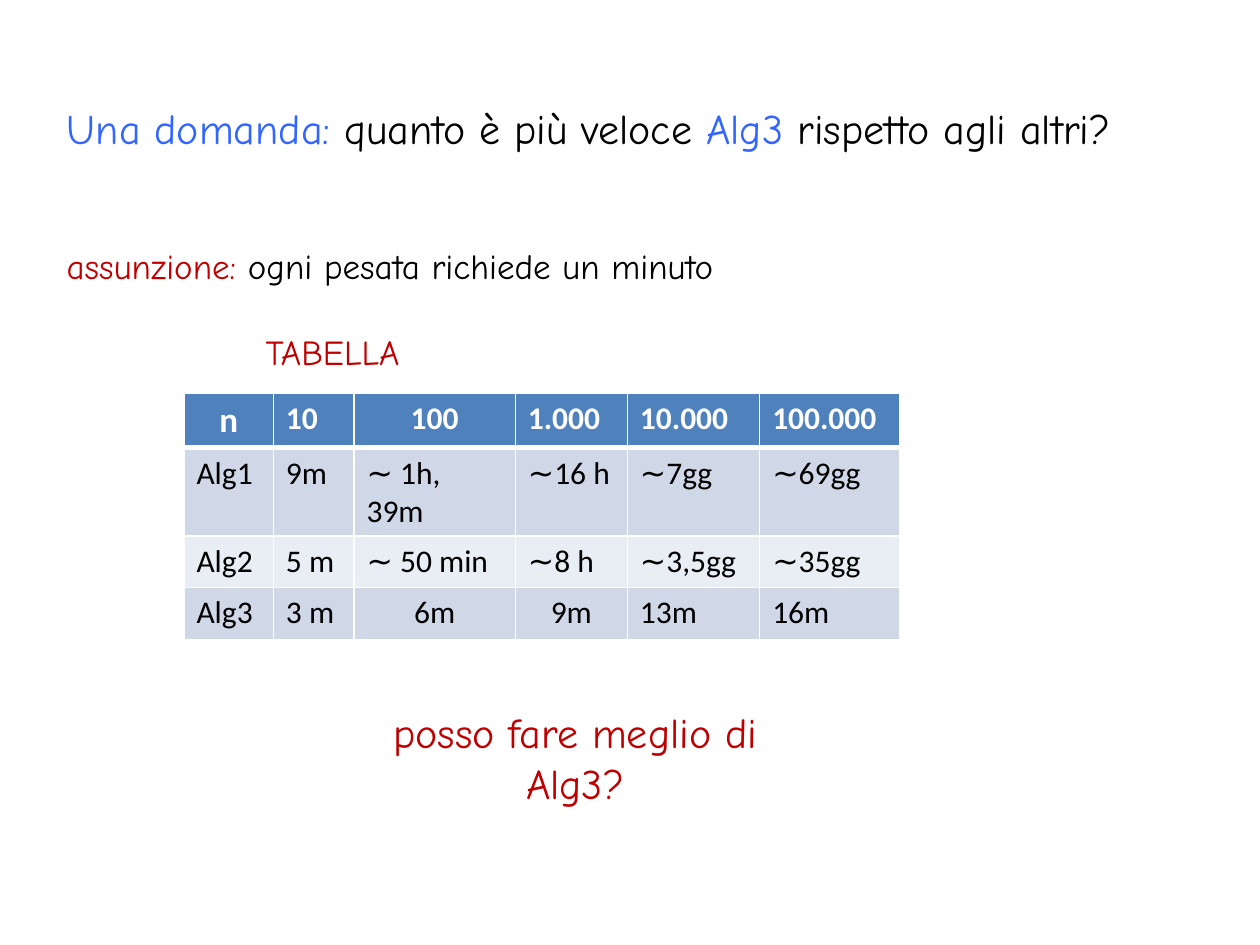
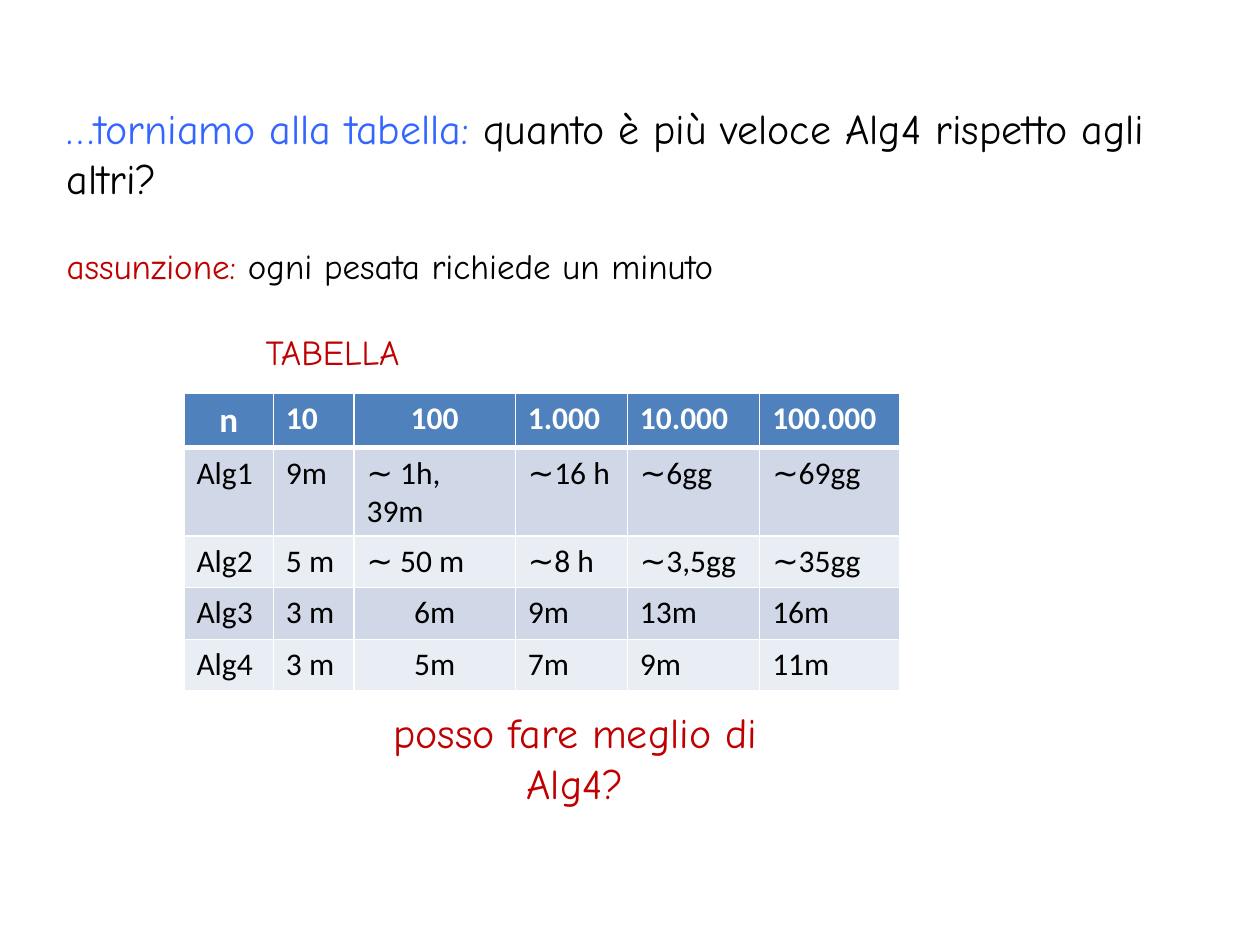
from dataclasses import dataclass
from typing import NamedTuple

from lxml import etree
from pptx import Presentation
from pptx import util as u
from pptx.dml.color import RGBColor
from pptx.enum import text
from pptx.oxml import ns

BLUE = RGBColor(0x33, 0x66, 0xFF)
RED = RGBColor(0xC0, 0x00, 0x00)
BLACK = RGBColor(0x00, 0x00, 0x00)
WHITE = RGBColor(0xFF, 0xFF, 0xFF)
HEADER = RGBColor(0x4F, 0x81, 0xBD)
BANDS = (RGBColor(0xE9, 0xED, 0xF4), RGBColor(0xD0, 0xD8, 0xE8))

TEXT_FONT = "Comic Neue"
TABLE_FONT = "Calibri"
SLIDE_W, SLIDE_H = u.Inches(10), u.Inches(7.5)
GRID_COLS, GRID_ROWS = 100, 75
COLUMN_WIDTHS = (7.1, 6.4, 12.8, 8.9, 10.5, 11.1)
ROW_HEIGHT = 4.1
HEADINGS = ("n", "10", "100", "1.000", "10.000", "100.000")


class Box(NamedTuple):
    col: float
    row: float
    cols: float
    rows: float


class Run(NamedTuple):
    words: str
    color: RGBColor


@dataclass(frozen=True)
class Label:
    box: Box
    runs: tuple[Run, ...]
    size: int
    align: text.PP_ALIGN = text.PP_ALIGN.LEFT


@dataclass(frozen=True)
class Comparison:
    title: Label
    times: tuple[tuple[str, ...], ...]
    centred: frozenset[tuple[int, int]]
    best: str


ASSUMPTION = Label(
    Box(4.3, 18.9, 59.8, 4.4),
    (Run("assunzione: ", RED), Run("ogni pesata richiede un minuto", BLACK)),
    20,
)
CAPTION = Label(Box(20.1, 25.7, 59.8, 4.4), (Run("TABELLA", RED),), 20)
TABLE_COL, TABLE_ROW = 14.6, 31.2

COMPARISONS = (
    Comparison(
        Label(
            Box(4.3, 7.6, 92.9, 5),
            (
                Run("Una domanda: ", BLUE),
                Run("quanto è più veloce ", BLACK),
                Run("Alg3 ", BLUE),
                Run("rispetto agli altri?", BLACK),
            ),
            24,
        ),
        (
            ("Alg1", "9m", "∼ 1h, 39m", "∼16 h", "∼7gg", "∼69gg"),
            ("Alg2", "5 m", "∼ 50 min", "∼8 h", "∼3,5gg", "∼35gg"),
            ("Alg3", "3 m", "6m", "9m", "13m", "16m"),
        ),
        frozenset({(0, 0), (0, 2), (3, 2), (3, 3)}),
        "Alg3",
    ),
    Comparison(
        Label(
            Box(4.3, 7.6, 92.9, 9.1),
            (
                Run("…torniamo alla tabella: ", BLUE),
                Run("quanto è più veloce Alg4 rispetto agli altri?", BLACK),
            ),
            24,
        ),
        (
            ("Alg1", "9m", "∼ 1h, 39m", "∼16 h", "∼6gg", "∼69gg"),
            ("Alg2", "5 m", "∼ 50 m", "∼8 h", "∼3,5gg", "∼35gg"),
            ("Alg3", "3 m", "6m", "9m", "13m", "16m"),
            ("Alg4", "3 m", "5m", "7m", "9m", "11m"),
        ),
        frozenset({(0, 0), (0, 2), (3, 2), (4, 2)}),
        "Alg4",
    ),
)


def across(cols: float) -> int:
    return round(SLIDE_W * cols / GRID_COLS)


def down(rows: float) -> int:
    return round(SLIDE_H * rows / GRID_ROWS)


def place(box: Box) -> tuple[int, int, int, int]:
    return across(box.col), down(box.row), across(box.cols), down(box.rows)


def add_run(p, run: Run, size: int, font: str, bold: bool = False) -> None:
    r = p.add_run()
    r.text = run.words
    r.font.name = font
    r.font.size = u.Pt(size)
    r.font.bold = bold
    r.font.color.rgb = run.color


def write_label(sp, label: Label) -> None:
    tf = sp.text_frame
    tf.word_wrap = True
    tf.auto_size = text.MSO_AUTO_SIZE.SHAPE_TO_FIT_TEXT
    tf.vertical_anchor = text.MSO_ANCHOR.TOP
    p = tf.paragraphs[0]
    p.alignment = label.align
    for run in label.runs:
        add_run(p, run, label.size, TEXT_FONT)


def add_title(s, label: Label) -> None:
    sp = s.shapes.title
    sp.left, sp.top, sp.width, sp.height = place(label.box)
    write_label(sp, label)


def add_label(s, label: Label) -> None:
    write_label(s.shapes.add_textbox(*place(label.box)), label)


def set_borders(cell, top: int, bottom: int) -> None:
    tc_pr = cell._tc.get_or_add_tcPr()
    edges = (("L", 1), ("R", 1), ("T", top), ("B", bottom))
    for i, (side, width) in enumerate(edges):
        ln = etree.Element(ns.qn(f"a:ln{side}"), w=str(u.Pt(width)))
        fill = etree.SubElement(ln, ns.qn("a:solidFill"))
        etree.SubElement(fill, ns.qn("a:srgbClr"), val=str(WHITE))
        tc_pr.insert(i, ln)


def add_times_table(s, comparison: Comparison) -> None:
    rows = (HEADINGS, *comparison.times)
    box = Box(TABLE_COL, TABLE_ROW, sum(COLUMN_WIDTHS), ROW_HEIGHT * len(rows))
    table = s.shapes.add_table(len(rows), len(HEADINGS), *place(box)).table
    table.first_row = table.horz_banding = False
    for column, width in zip(table.columns, COLUMN_WIDTHS):
        column.width = across(width)
    for i, row in enumerate(rows):
        table.rows[i].height = down(ROW_HEIGHT)
        is_header = i == 0
        for j, words in enumerate(row):
            cell = table.cell(i, j)
            cell.fill.solid()
            cell.fill.fore_color.rgb = HEADER if is_header else BANDS[i % 2]
            set_borders(cell, 3 if i == 1 else 1, 3 if is_header else 1)
            p = cell.text_frame.paragraphs[0]
            if (i, j) in comparison.centred:
                p.alignment = text.PP_ALIGN.CENTER
            run = Run(words, WHITE if is_header else BLACK)
            add_run(p, run, 20 if i == j == 0 else 18, TABLE_FONT, is_header)


def add_comparison(prs, comparison: Comparison) -> None:
    s = prs.slides.add_slide(prs.slide_layouts.get_by_name("Title Only"))
    add_title(s, comparison.title)
    question = Label(
        Box(28.7, 55.6, 33.9, 9.1),
        (Run(f"posso fare meglio di {comparison.best}?", RED),),
        24,
        text.PP_ALIGN.CENTER,
    )
    for label in (ASSUMPTION, CAPTION, question):
        add_label(s, label)
    add_times_table(s, comparison)


def main() -> None:
    prs = Presentation()
    prs.slide_width, prs.slide_height = SLIDE_W, SLIDE_H
    for comparison in COMPARISONS:
        add_comparison(prs, comparison)
    prs.save("out.pptx")


if __name__ == "__main__":
    main()
